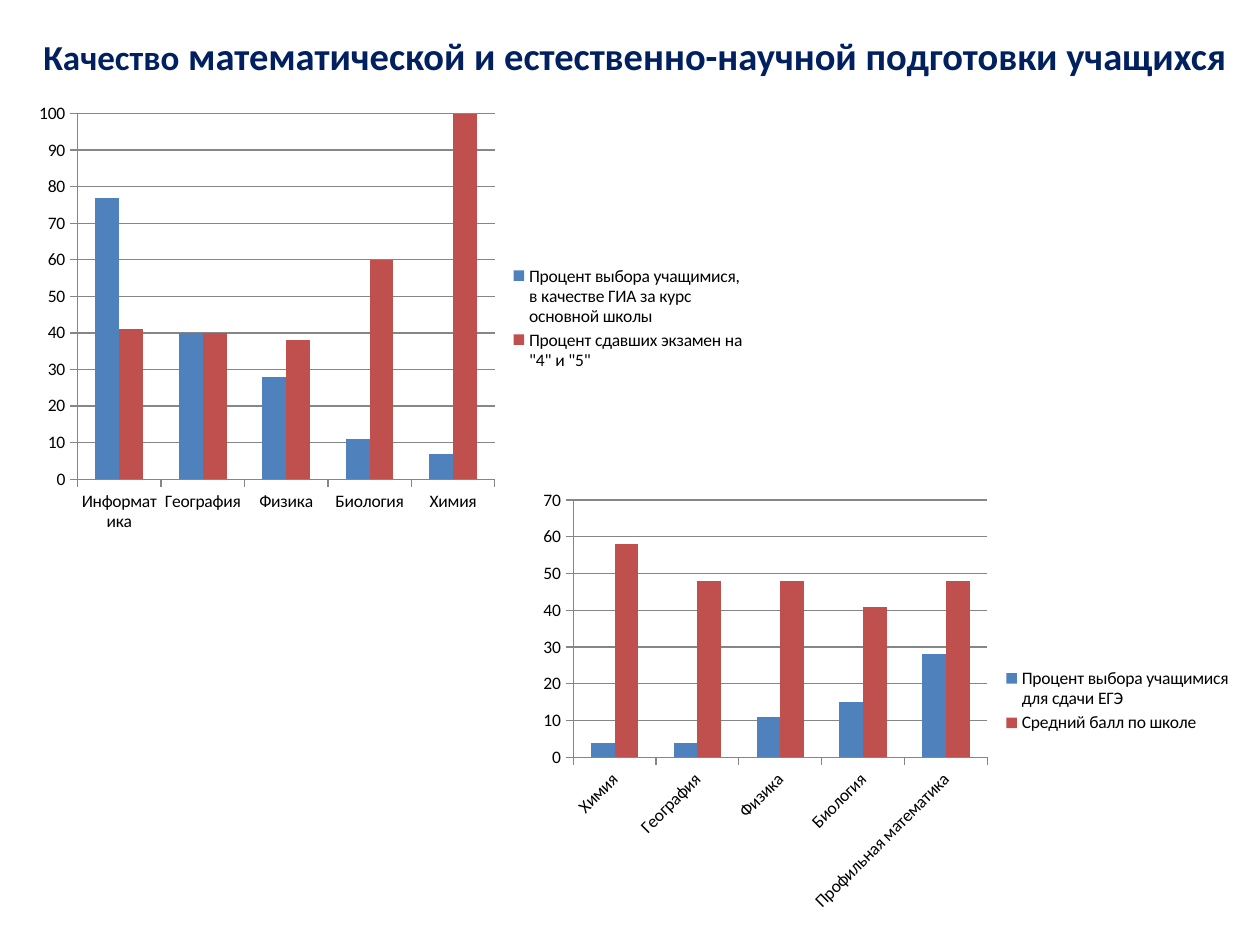
from dataclasses import dataclass

from lxml import etree
from pptx import Presentation
from pptx.chart.data import CategoryChartData
from pptx.dml.color import RGBColor
from pptx.enum.chart import XL_CHART_TYPE, XL_LEGEND_POSITION, XL_TICK_MARK
from pptx.enum.text import MSO_AUTO_SIZE, PP_ALIGN
from pptx.oxml.ns import qn
from pptx.util import Cm, Pt


@dataclass(frozen=True)
class Theme:
    font: str = "Calibri"
    title: RGBColor = RGBColor(0x00, 0x20, 0x60)
    text: RGBColor = RGBColor(0x00, 0x00, 0x00)
    line: RGBColor = RGBColor(0x86, 0x86, 0x86)
    series: tuple = (RGBColor(0x4F, 0x81, 0xBD), RGBColor(0xC0, 0x50, 0x4D))
    title_small: Pt = Pt(20)
    title_large: Pt = Pt(22)
    chart_size: Pt = Pt(10)


THEME = Theme()


def set_plot_layout(chart, box):
    """Fix the inner plot area; box is x, y, w, h as fractions of the chart."""
    plot_area = chart._chartSpace.chart.plotArea
    for old in plot_area.findall(qn("c:layout")):
        plot_area.remove(old)
    layout = etree.Element(qn("c:layout"))
    manual = etree.SubElement(layout, qn("c:manualLayout"))
    settings = [("layoutTarget", "inner"), ("xMode", "edge"), ("yMode", "edge")]
    for tag, value in settings + list(zip("xywh", box)):
        etree.SubElement(manual, qn(f"c:{tag}")).set("val", str(value))
    plot_area.insert(0, layout)


prs = Presentation()
prs.slide_width, prs.slide_height = Cm(25.4), Cm(19.05)
s = prs.slides.add_slide(prs.slide_layouts[6])

# Title
tf = s.shapes.add_textbox(Cm(0.5), Cm(0.53), Cm(24.6), Cm(1.2)).text_frame
tf.word_wrap = True
tf.auto_size = MSO_AUTO_SIZE.SHAPE_TO_FIT_TEXT
p = tf.paragraphs[0]
p.alignment = PP_ALIGN.CENTER
for text, size in [
    ("Качество", THEME.title_small),
    (" математической и естественно-научной подготовки учащихся", THEME.title_large),
]:
    r = p.add_run()
    r.text = text
    r.font.name, r.font.size, r.font.bold = THEME.font, size, True
    r.font.color.rgb = THEME.title

# Charts: school-leaving exams after the basic course, then after the full course
charts = [
    {
        "at": (Cm(0.53), Cm(1.93), Cm(14.76), Cm(8.99)),
        "plot": (0.07, 0.04, 0.57, 0.82),
        "max": 100,
        "label_angle": 0,
        "subjects": ["Информатика", "География", "Физика", "Биология", "Химия"],
        "series": {
            "Процент выбора учащимися, в качестве ГИА за курс основной школы":
                (77, 40, 28, 11, 7),
            'Процент сдавших экзамен на "4" и "5"': (41, 40, 38, 60, 100),
        },
    },
    {
        "at": (Cm(10.69), Cm(9.73), Cm(14.4), Cm(8.79)),
        "plot": (0.06, 0.04, 0.58, 0.59),
        "max": 70,
        "label_angle": -45,
        "subjects": ["Химия", "География", "Физика", "Биология",
                     "Профильная математика"],
        "series": {
            "Процент выбора учащимися для сдачи ЕГЭ": (4, 4, 11, 15, 28),
            "Средний балл по школе": (58, 48, 48, 41, 48),
        },
    },
]

for item in charts:
    data = CategoryChartData()
    data.categories = item["subjects"]
    for name, values in item["series"].items():
        data.add_series(name, values)
    chart = s.shapes.add_chart(XL_CHART_TYPE.COLUMN_CLUSTERED, *item["at"], data).chart
    chart.has_title = False
    chart.font.name, chart.font.size = THEME.font, THEME.chart_size
    chart.font.color.rgb = THEME.text

    chart.has_legend = True
    chart.legend.position = XL_LEGEND_POSITION.RIGHT
    chart.legend.include_in_layout = False

    plot = chart.plots[0]
    plot.gap_width, plot.overlap = 150, 0
    plot.vary_by_categories = False
    for series, color in zip(plot.series, THEME.series):
        series.format.fill.solid()
        series.format.fill.fore_color.rgb = color

    cat_axis, val_axis = chart.category_axis, chart.value_axis
    for axis in (cat_axis, val_axis):
        axis.major_tick_mark = XL_TICK_MARK.OUTSIDE
        axis.minor_tick_mark = XL_TICK_MARK.NONE
        axis.format.line.color.rgb = THEME.line
        axis.tick_labels.font.size = THEME.chart_size
    val_axis.minimum_scale, val_axis.maximum_scale = 0, item["max"]
    val_axis.major_unit = 10
    val_axis.has_major_gridlines = True
    val_axis.major_gridlines.format.line.color.rgb = THEME.line

    body = cat_axis._element.find(qn("c:txPr")).find(qn("a:bodyPr"))
    body.set("rot", str(item["label_angle"] * 60000))
    set_plot_layout(chart, item["plot"])

prs.save("out.pptx")
